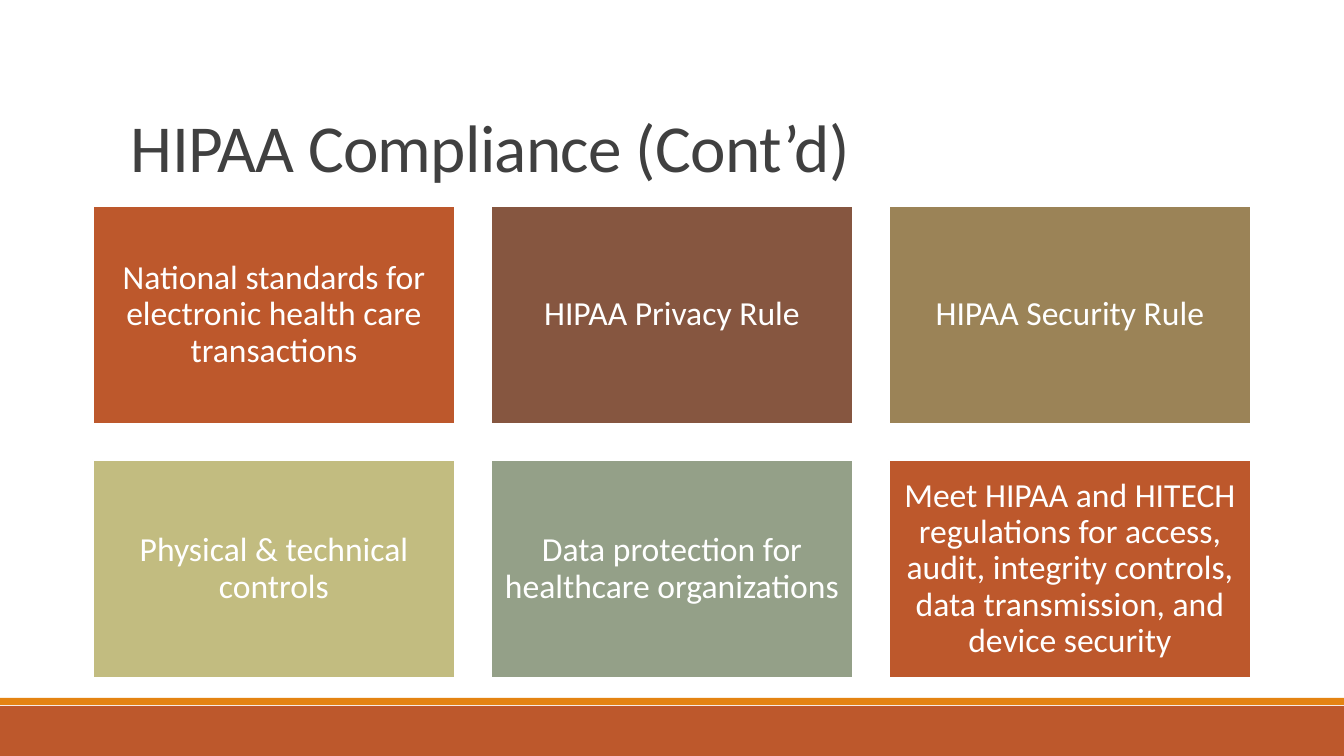
from pptx import Presentation
from pptx.dml.color import RGBColor
from pptx.enum.shapes import MSO_SHAPE
from pptx.enum.text import MSO_ANCHOR, PP_ALIGN
from pptx.util import Emu, Pt

WHITE = RGBColor(0xFF, 0xFF, 0xFF)
CHARCOAL = RGBColor(0x40, 0x40, 0x40)
RUST = RGBColor(0xBD, 0x58, 0x2C)
ORANGE = RGBColor(0xE4, 0x83, 0x12)
BROWN = RGBColor(0x86, 0x56, 0x40)
TAN = RGBColor(0x9B, 0x83, 0x57)
KHAKI = RGBColor(0xC2, 0xBC, 0x80)
SAGE = RGBColor(0x94, 0xA0, 0x88)

PAGE_WIDTH, PAGE_HEIGHT = 1344, 756
EMU_PER_PX = 12192000 / PAGE_WIDTH

TILES = [
    ("National standards for electronic health care transactions", RUST),
    ("HIPAA Privacy Rule", BROWN),
    ("HIPAA Security Rule", TAN),
    ("Physical & technical controls", KHAKI),
    ("Data protection for healthcare organizations", SAGE),
    ("Meet HIPAA and HITECH regulations for access, audit, integrity controls, "
     "data transmission, and device security", RUST),
]
COLUMNS = 3
TILE_LEFT, TILE_TOP = 93, 206
TILE_WIDTH, TILE_HEIGHT = 362, 218
TILE_GAP = 36


def px(*lengths):
    return [Emu(round(length * EMU_PER_PX)) for length in lengths]


class SlideBuilder:
    font_name = "Calibri"

    def __init__(self, page):
        self.page = page

    def add_text(self, frame, text, size, color, line_spacing):
        frame.word_wrap = True
        para = frame.paragraphs[0]
        para.line_spacing = line_spacing
        para.font.name = self.font_name
        para.font.size = Pt(size)
        para.font.color.rgb = color
        span = para.add_run()
        span.text = text
        return para, span

    def title(self, text, left, top, width, height):
        box = self.page.shapes.add_textbox(*px(left, top, width, height))
        frame = box.text_frame
        frame.vertical_anchor = MSO_ANCHOR.BOTTOM
        para, span = self.add_text(frame, text, 48, CHARCOAL, 0.85)
        span._r.get_or_add_rPr().set("spc", "-50")

    def band(self, color, left, top, width, height):
        shape = self.page.shapes.add_shape(
            MSO_SHAPE.RECTANGLE, *px(left, top, width, height))
        shape.shadow.inherit = False
        shape.fill.solid()
        shape.fill.fore_color.rgb = color
        shape.line.fill.background()
        return shape

    def tile(self, text, color, left, top, width, height):
        shape = self.band(color, left, top, width, height)
        shape.line.color.rgb = WHITE
        shape.line.width = Pt(1.25)
        frame = shape.text_frame
        frame.vertical_anchor = MSO_ANCHOR.MIDDLE
        inset, = px(10)
        frame.margin_left = frame.margin_right = inset
        frame.margin_top = frame.margin_bottom = inset
        para, span = self.add_text(frame, text, 24, WHITE, 0.9)
        para.alignment = PP_ALIGN.CENTER


def main():
    deck = Presentation()
    deck.slide_width, deck.slide_height = px(PAGE_WIDTH, PAGE_HEIGHT)
    builder = SlideBuilder(deck.slides.add_slide(deck.slide_layouts[6]))

    builder.band(RUST, 0, 706, PAGE_WIDTH, 50)
    builder.band(ORANGE, 0, 698, PAGE_WIDTH, 7)
    builder.title("HIPAA Compliance (Cont’d)", 121, 31, 1109, 160)

    for index, (text, color) in enumerate(TILES):
        row, column = divmod(index, COLUMNS)
        left = TILE_LEFT + column * (TILE_WIDTH + TILE_GAP)
        top = TILE_TOP + row * (TILE_HEIGHT + TILE_GAP)
        builder.tile(text, color, left, top, TILE_WIDTH, TILE_HEIGHT)

    deck.save("out.pptx")


if __name__ == "__main__":
    main()
